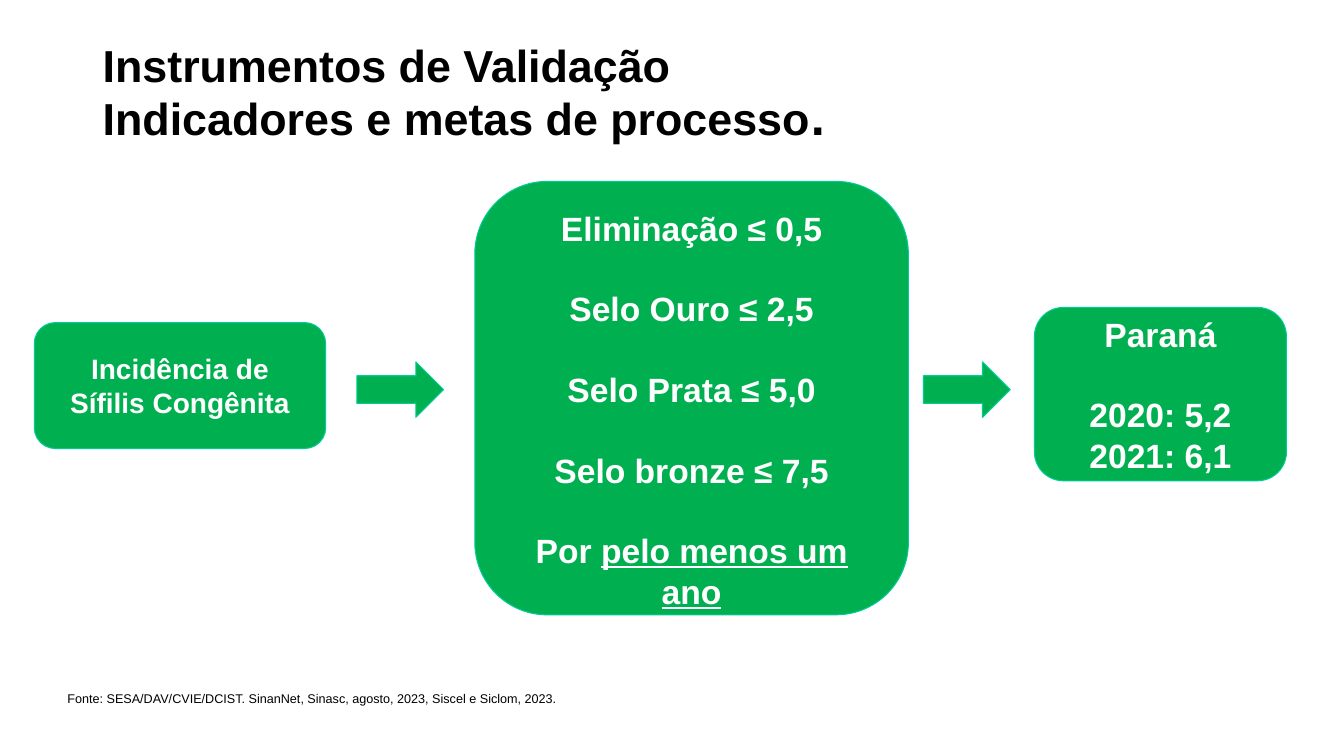
from pptx import Presentation
from pptx import util as u
from pptx.dml.color import RGBColor
from pptx.enum import shapes, text

COLORS = {"fill": "00B050", "line": "00CC99", "light": "FFFFFF", "dark": "000000"}
BLANK_LINE = 28.8

deck = Presentation()
deck.slide_width = u.Inches(13.33)
deck.slide_height = u.Inches(7.5)
page = deck.slides.add_slide(deck.slide_layouts[6])


def add_span(para, words, size, color, bold=True, underline=None):
    span = para.add_run()
    span.text = words
    span.font.name = "Arial"
    span.font.size = u.Pt(size)
    span.font.bold = bold
    span.font.underline = underline
    span.font.color.rgb = RGBColor.from_string(COLORS[color])


def add_green_shape(kind, left, top, width, height):
    shape = page.shapes.add_shape(
        kind, u.Inches(left), u.Inches(top), u.Inches(width), u.Inches(height)
    )
    shape.shadow.inherit = False
    shape.fill.solid()
    shape.fill.fore_color.rgb = RGBColor.from_string(COLORS["fill"])
    shape.line.color.rgb = RGBColor.from_string(COLORS["line"])
    shape.line.width = u.Pt(0.75)
    return shape


title = page.shapes.add_textbox(u.Inches(0.92), u.Inches(0.4), u.Inches(11.49), u.Inches(1.09))
title.text_frame.word_wrap = True
title.text_frame.vertical_anchor = text.MSO_ANCHOR.MIDDLE
para = title.text_frame.paragraphs[0]
para.line_spacing = 0.9
add_span(para, "Instrumentos de Validação", 32, "dark")
para.add_line_break()
add_span(para, "Indicadores e metas de processo", 32, "dark")
add_span(para, ".", 36, "dark")

source = page.shapes.add_textbox(u.Inches(0.57), u.Inches(6.8), u.Inches(6.33), u.Inches(0.25))
source.text_frame.word_wrap = True
add_span(
    source.text_frame.paragraphs[0],
    "Fonte: SESA/DAV/CVIE/DCIST. SinanNet, Sinasc, agosto, 2023, Siscel e Siclom, 2023.",
    9, "dark", bold=False,
)

middle, top_anchor = text.MSO_ANCHOR.MIDDLE, text.MSO_ANCHOR.TOP
cards = [
    ((0.34, 3.2, 2.89, 1.25), middle, 20, [("Incidência de Sífilis Congênita", "", 0)]),
    ((4.71, 1.8, 4.3, 4.3), top_anchor, 24, [
        ("Eliminação ≤ 0,5", "", 0),
        ("Selo Ouro ≤ 2,5", "", BLANK_LINE),
        ("Selo Prata ≤ 5,0", "", BLANK_LINE),
        ("Selo bronze ≤ 7,5", "", BLANK_LINE),
        ("Por ", "pelo menos um ano", BLANK_LINE),
    ]),
    ((10.26, 3.05, 2.5, 1.72), middle, 24, [
        ("Paraná", "", 0),
        ("2020: 5,2", "", BLANK_LINE),
        ("2021: 6,1", "", 0),
    ]),
]
for place, anchor, size, lines in cards:
    frame = add_green_shape(shapes.MSO_SHAPE.ROUNDED_RECTANGLE, *place).text_frame
    frame.word_wrap = True
    frame.vertical_anchor = anchor
    for index, (plain, underlined, gap) in enumerate(lines):
        para = frame.add_paragraph() if index else frame.paragraphs[0]
        para.alignment = text.PP_ALIGN.CENTER
        if gap:
            para.space_before = u.Pt(gap)
        add_span(para, plain, size, "light")
        if underlined:
            add_span(para, underlined, size, "light", underline=True)

for left in (3.54, 9.16):
    add_green_shape(shapes.MSO_SHAPE.RIGHT_ARROW, left, 3.59, 0.86, 0.55)

deck.save("out.pptx")
